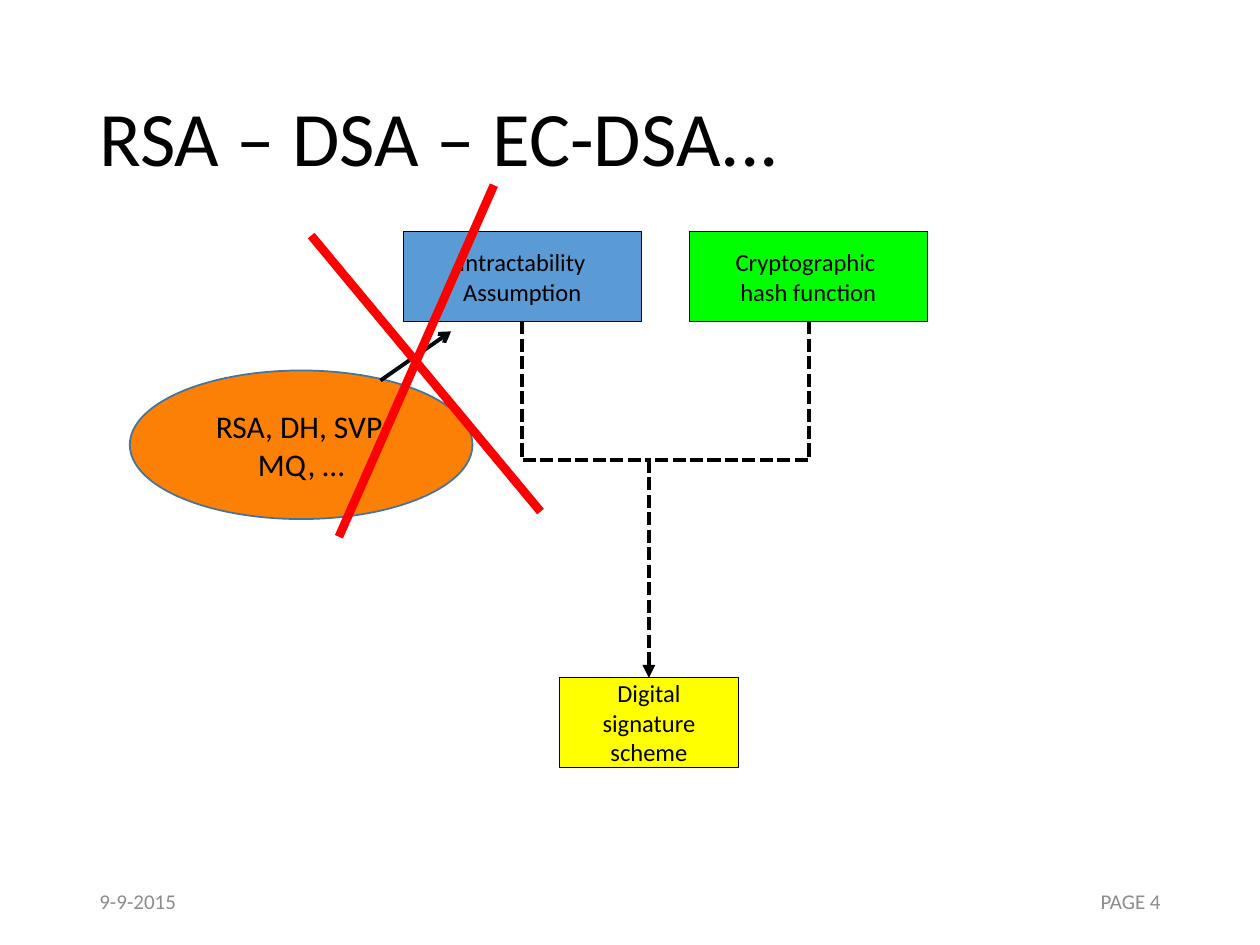
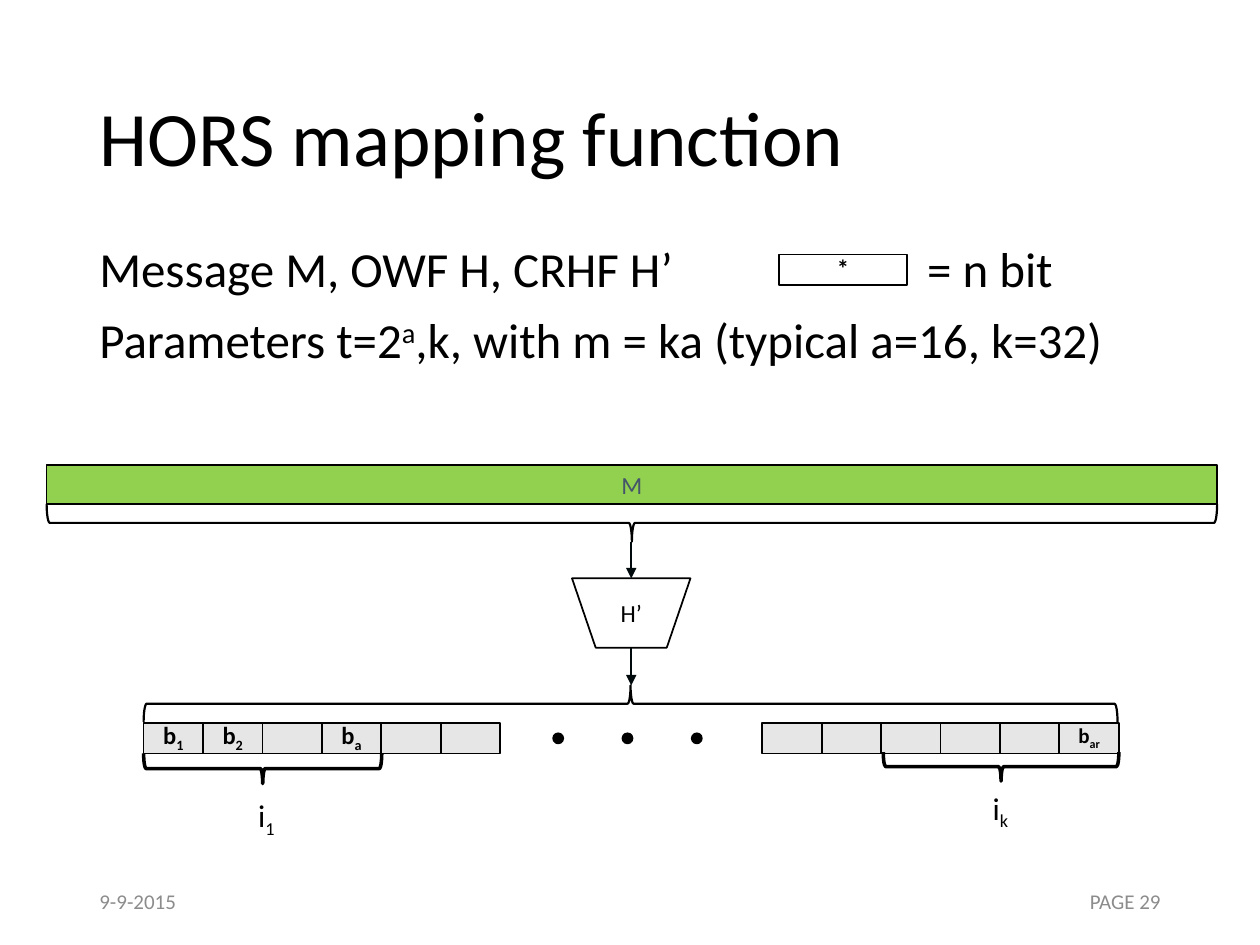
"""Build two slides on signature schemes and the HORS mapping function."""
from dataclasses import dataclass
from typing import NamedTuple

from lxml import etree
from pptx import Presentation
from pptx.dml.color import RGBColor
from pptx.enum.dml import MSO_LINE
from pptx.enum.shapes import MSO_CONNECTOR, MSO_SHAPE
from pptx.enum.text import MSO_ANCHOR, PP_ALIGN
from pptx.oxml.ns import qn
from pptx.util import Inches, Pt

RECTANGLE = MSO_SHAPE.RECTANGLE
OVAL = MSO_SHAPE.OVAL
BRACE = MSO_SHAPE.RIGHT_BRACE
FUNNEL = MSO_SHAPE.FLOWCHART_MANUAL_OPERATION
STRAIGHT = MSO_CONNECTOR.STRAIGHT
ELBOW = MSO_CONNECTOR.ELBOW
DASHED = MSO_LINE.SQUARE_DOT
LEFT, CENTER, RIGHT = PP_ALIGN.LEFT, PP_ALIGN.CENTER, PP_ALIGN.RIGHT
MIDDLE, TOP = MSO_ANCHOR.MIDDLE, MSO_ANCHOR.TOP
TOP_SITE, BOTTOM_SITE = 0, 2

FONT = "Calibri"
BLACK = RGBColor(0x00, 0x00, 0x00)
INK = RGBColor(0x00, 0x09, 0x0C)
FOOTER_GRAY = RGBColor(0x8C, 0x8C, 0x8C)
SLATE = RGBColor(0x44, 0x54, 0x6A)
BLUE = RGBColor(0x5B, 0x9B, 0xD5)
DARK_BLUE = RGBColor(0x43, 0x73, 0x9E)
BRIGHT_GREEN = RGBColor(0x00, 0xFF, 0x00)
YELLOW = RGBColor(0xFF, 0xFF, 0x00)
ORANGE = RGBColor(0xFB, 0x80, 0x05)
RED = RGBColor(0xFF, 0x00, 0x00)
MESSAGE_GREEN = RGBColor(0x92, 0xD0, 0x50)
CELL_GRAY = RGBColor(0xE7, 0xE6, 0xE6)

MARGIN = 0.69
DATE = "9-9-2015"
SUBSCRIPT, SUPERSCRIPT = "-25000", "30000"
CELL_COUNT = 6
CELL_WIDTH = 2.83 / CELL_COUNT
CELL_TOP, CELL_HEIGHT = 5.74, 0.24
CELL_MARGINS = {"margin_top": Inches(0.05), "margin_bottom": Inches(0.08)}


class Area(NamedTuple):
    """Left, top, width and height in inches."""
    left: float
    top: float
    width: float
    height: float

    def lengths(self) -> list:
        """Return the four values as lengths."""
        return [Inches(value) for value in self]


class Segment(NamedTuple):
    """A stretch of text with an optional baseline shift."""
    text: str
    baseline: str = ""


@dataclass
class TextStyle:
    """How the text of a shape looks."""
    size: float = 14
    color: RGBColor = BLACK
    bold: bool = False
    alignment: PP_ALIGN = CENTER
    anchor: MSO_ANCHOR = MIDDLE
    line_spacing: float = 1.0
    space_before: float = 0


@dataclass
class Box:
    """A preset shape with an outline, and an optional fill and text."""
    area: Area
    segments: tuple = ()
    fill: RGBColor | None = None
    kind: MSO_SHAPE = RECTANGLE
    line: RGBColor = BLACK
    line_width: float = 1
    style: TextStyle | None = None
    rotation: float = 0


@dataclass
class Stroke:
    """The line of a connector."""
    color: RGBColor = INK
    width: float = 1.25
    dash: MSO_LINE | None = None
    arrowhead: str = ""


TITLE_STYLE = TextStyle(44, alignment=LEFT, line_spacing=0.9)
BODY_STYLE = TextStyle(28, alignment=LEFT, anchor=TOP, line_spacing=0.9, space_before=10)
LABEL_STYLE = TextStyle(18, alignment=LEFT, anchor=TOP)
CELL_STYLE = TextStyle(bold=True)


def write(shape, paragraphs: list, style: TextStyle) -> None:
    """Fill a shape with paragraphs of segments."""
    frame = shape.text_frame
    frame.word_wrap = True
    frame.vertical_anchor = style.anchor
    for index, segments in enumerate(paragraphs):
        paragraph = frame.add_paragraph() if index else frame.paragraphs[0]
        layout = {
            "alignment": style.alignment,
            "line_spacing": style.line_spacing,
            "space_before": Pt(style.space_before),
        }
        for name, value in layout.items():
            setattr(paragraph, name, value)
        for segment in segments:
            for position, line in enumerate(segment.text.split("\n")):
                if position:
                    paragraph.add_line_break()
                run = paragraph.add_run()
                run.text = line
                look = {"name": FONT, "size": Pt(style.size), "bold": style.bold}
                for name, value in look.items():
                    setattr(run.font, name, value)
                run.font.color.rgb = style.color
                if segment.baseline:
                    run._r.get_or_add_rPr().set("baseline", segment.baseline)


def add_text(slide, area: Area, paragraphs: list, style: TextStyle):
    """Add a text box."""
    shape = slide.shapes.add_textbox(*area.lengths())
    write(shape, paragraphs, style)
    return shape


def add_box(slide, box: Box):
    """Add a preset shape."""
    shape = slide.shapes.add_shape(box.kind, *box.area.lengths())
    shape.shadow.inherit = False
    shape.rotation = box.rotation
    if box.fill is None:
        shape.fill.background()
    else:
        shape.fill.solid()
        shape.fill.fore_color.rgb = box.fill
    shape.line.color.rgb = box.line
    shape.line.width = Pt(box.line_width)
    if box.segments:
        write(shape, [box.segments], box.style or TextStyle())
    return shape


def add_cell(slide, area: Area, segments: tuple = (), fill: RGBColor | None = CELL_GRAY,
             style: TextStyle = CELL_STYLE) -> None:
    """Add a bit cell with its own text margins."""
    shape = add_box(slide, Box(area, segments, fill, style=style))
    for name, value in CELL_MARGINS.items():
        setattr(shape.text_frame, name, value)


def add_brace(slide, area: Area, width: float, rotation: float = 90) -> None:
    """Add a horizontal brace that covers the given area."""
    left = area.left + (area.width - area.height) / 2
    top = area.top + (area.height - area.width) / 2
    upright = Area(left, top, area.height, area.width)
    add_box(slide, Box(upright, kind=BRACE, line_width=width, rotation=rotation))


def add_line(shapes, start: tuple, end: tuple, stroke: Stroke, kind: MSO_CONNECTOR = STRAIGHT):
    """Add a connector between two points."""
    connector = shapes.add_connector(kind, *[Inches(value) for value in (*start, *end)])
    connector.line.color.rgb = stroke.color
    connector.line.width = Pt(stroke.width)
    if stroke.dash is not None:
        connector.line.dash_style = stroke.dash
    properties = connector.element.spPr
    if stroke.arrowhead:
        outline = properties.find(qn("a:ln"))
        etree.SubElement(outline, qn("a:tailEnd"), type=stroke.arrowhead)
    etree.SubElement(properties, qn("a:effectLst"))
    return connector


def add_corner(slide, start: tuple, end: tuple, stroke: Stroke) -> None:
    """Add an elbow that runs down and then sideways."""
    connector = add_line(slide.shapes, start, end, stroke, ELBOW)
    run, drop = abs(end[0] - start[0]), end[1] - start[1]
    center_x, center_y = (start[0] + end[0]) / 2, (start[1] + end[1]) / 2
    area = Area(center_x - drop / 2, center_y - run / 2, drop, run)
    for name, value in zip(("left", "top", "width", "height"), area.lengths()):
        setattr(connector, name, value)
    properties = connector.element.spPr
    properties.find(qn("a:prstGeom")).set("prst", "bentConnector2")
    goes_right = end[0] > start[0]
    transform = properties.find(qn("a:xfrm"))
    transform.set("rot", str((270 if goes_right else 90) * 60000))
    transform.set("flipH", "1" if goes_right else "0")


def add_page(presentation, title: str, number: int):
    """Add a blank slide with the title, date and page number."""
    slide = presentation.slides.add_slide(presentation.slide_layouts[6])
    add_text(slide, Area(MARGIN, 0.4, 8.62, 1.45), [[Segment(title)]], TITLE_STYLE)
    for left, text, alignment in ((MARGIN, DATE, LEFT), (7.06, f"PAGE {number}", RIGHT)):
        style = TextStyle(12, FOOTER_GRAY, alignment=alignment)
        add_text(slide, Area(left, 6.95, 2.25, 0.4), [[Segment(text)]], style)
    return slide


def build_scheme_slide(presentation) -> None:
    """Build the slide on the parts of a signature scheme."""
    slide = add_page(presentation, "RSA – DSA – EC-DSA...", 4)
    boxes = (
        (Area(3.2, 1.84, 1.89, 0.71), "Intractability Assumption", BLUE),
        (Area(5.47, 1.84, 1.89, 0.71), "Cryptographic \nhash function", BRIGHT_GREEN),
        (Area(4.44, 5.38, 1.42, 0.71), "Digital signature scheme", YELLOW),
    )
    for area, text, fill in boxes:
        scheme = add_box(slide, Box(area, (Segment(text),), fill, line_width=0.5))

    junction = (5.15, 3.65)
    arrow = add_line(slide.shapes, junction, (5.15, 5.38), Stroke(BLACK, 2.5, DASHED, "triangle"))
    arrow.end_connect(scheme, TOP_SITE)
    for center in (4.14, 6.42):
        add_corner(slide, (center, 2.55), junction, Stroke(BLACK, 2.5, DASHED))

    add_box(slide, Box(Area(1.03, 2.94, 2.72, 1.18), (Segment("RSA, DH, SVP, MQ, …"),),
                       ORANGE, OVAL, DARK_BLUE, style=TextStyle(18)))
    add_line(slide.shapes, (3.02, 3.02), (3.58, 2.63), Stroke(width=2.25, arrowhead="arrow"))
    cross = slide.shapes.add_group_shape()
    for start, end in (((2.47, 1.87), (4.29, 4.06)), ((3.92, 1.47), (2.69, 4.26))):
        add_line(cross.shapes, start, end, Stroke(RED, 5))


def build_mapping_slide(presentation) -> None:
    """Build the slide on the HORS mapping function."""
    slide = add_page(presentation, "HORS mapping function", 29)
    body = add_text(slide, Area(MARGIN, 1.9, 8.74, 1.2), [
        [Segment("Message M, OWF H, CRHF H’\t= n bit")],
        [Segment("Parameters t=2"), Segment("a", SUPERSCRIPT),
         Segment(",k, with m = ka (typical a=16, k=32)")],
    ], BODY_STYLE)
    paragraph_properties = body.text_frame.paragraphs[0]._p.get_or_add_pPr()
    tabs = etree.SubElement(paragraph_properties, qn("a:tabLst"))
    etree.SubElement(tabs, qn("a:tab"), pos=str(Inches(6.57)), algn="l")

    indexes = {(0, 0): "1", (0, 1): "2", (0, 3): "a", (1, 5): "ar"}
    for block, block_left in enumerate((1.14, 6.05)):
        for column in range(CELL_COUNT):
            area = Area(block_left + column * CELL_WIDTH, CELL_TOP, CELL_WIDTH, CELL_HEIGHT)
            index = indexes.get((block, column))
            segments = (Segment("b"), Segment(index, SUBSCRIPT)) if index else ()
            style = TextStyle(12, bold=True) if index == "ar" else CELL_STYLE
            add_cell(slide, area, segments, style=style)
    for dot in range(3):
        add_box(slide, Box(Area(4.39 + dot * 0.55, 5.82, 0.08, 0.08), fill=BLACK, kind=OVAL))

    add_box(slide, Box(Area(0.37, 3.69, 9.29, 0.31), (Segment("M"),), MESSAGE_GREEN,
                       style=TextStyle(color=SLATE)))
    hash_shape = add_box(slide, Box(Area(4.54, 4.59, 0.94, 0.55), (Segment("H’"),), kind=FUNNEL))
    braces = (
        (Area(1.14, 5.98, 1.89, 0.24), 2, 90),
        (Area(7.01, 5.97, 1.87, 0.23), 2, 90),
        (Area(0.37, 4, 9.29, 0.3), 1.25, 90),
        (Area(1.14, 5.44, 7.73, 0.29), 1.25, 270),
    )
    for area, width, rotation in braces:
        add_brace(slide, area, width, rotation)
    for left, top, index in ((1.95, 6.27, "1"), (7.78, 6.21, "k")):
        label = [Segment("i"), Segment(index, SUBSCRIPT)]
        add_text(slide, Area(left, top, 0.47, 0.4), [label], LABEL_STYLE)

    arrow = Stroke(arrowhead="triangle")
    add_line(slide.shapes, (5.01, 4.3), (5.01, 4.59), arrow).end_connect(hash_shape, TOP_SITE)
    add_line(slide.shapes, (5.01, 5.14), (5.01, 5.44), arrow).begin_connect(hash_shape, BOTTOM_SITE)
    add_cell(slide, Area(6.18, 2.02, 1.02, 0.24), (Segment("*"),), None)


def main() -> None:
    """Create and save the presentation."""
    presentation = Presentation()
    presentation.slide_width = Inches(10)
    presentation.slide_height = Inches(7.5)
    build_scheme_slide(presentation)
    build_mapping_slide(presentation)
    presentation.save("out.pptx")


if __name__ == "__main__":
    main()
